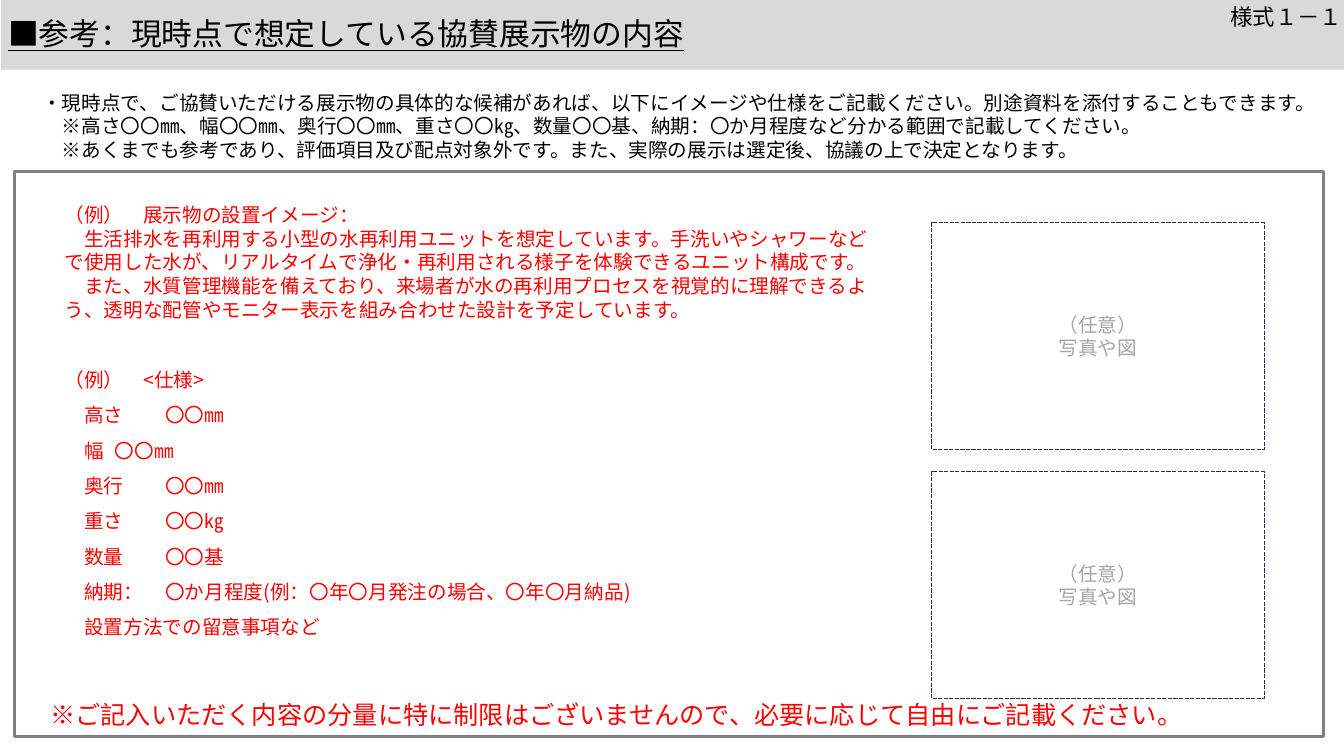
from dataclasses import dataclass

from pptx import Presentation
from pptx import util as u
from pptx.dml.color import RGBColor
from pptx.enum import dml, shapes, text
from pptx.oxml.ns import qn

FONT = "Noto Sans CJK JP"
LEADING = 1.2
COLORS = {
    "ink": "000000",
    "example": "FF0000",
    "band": "D9D9D9",
    "frame": "808080",
    "paper": "FFFFFF",
    "dash": "1E3256",
    "hint": "A6A6A6",
}

TITLE = "■参考：現時点で想定している協賛展示物の内容"
FORM_NUMBER = "様式１－１"
INTRO = [
    "・現時点で、ご協賛いただける展示物の具体的な候補があれば、以下にイメージや仕様をご記載ください。別途資料を添付することもできます。",
    "　※高さ〇〇㎜、幅〇〇㎜、奥行〇〇㎜、重さ〇〇㎏、数量〇〇基、納期：〇か月程度など分かる範囲で記載してください。",
    "　※あくまでも参考であり、評価項目及び配点対象外です。また、実際の展示は選定後、協議の上で決定となります。",
]
IMAGE_HEADING = "（例）　展示物の設置イメージ："
IMAGE_TEXT = [
    "　生活排水を再利用する小型の水再利用ユニットを想定しています。手洗いやシャワーなどで使用した水が、リアルタイムで浄化・再利用される様子を体験できるユニット構成です。",
    "　また、水質管理機能を備えており、来場者が水の再利用プロセスを視覚的に理解できるよう、透明な配管やモニター表示を組み合わせた設計を予定しています。",
]
SPEC_HEADING = "（例）　<仕様>"
SPECS = [
    ("高さ", "〇〇㎜"),
    ("幅", "〇〇㎜"),
    ("奥行", "〇〇㎜"),
    ("重さ", "〇〇㎏"),
    ("数量", "〇〇基"),
    ("納期：", "〇か月程度(例：〇年〇月発注の場合、〇年〇月納品)"),
]
SPEC_NOTE = "　設置方法での留意事項など"
PHOTO_HINT = ["（任意）", "写真や図"]
FOOTNOTE = "※ご記入いただく内容の分量に特に制限はございませんので、必要に応じて自由にご記載ください。"


@dataclass
class Box:
    left: float
    top: float
    width: float
    height: float

    def share(self, left, top, width, height):
        return Box(
            self.left + self.width * left / 100,
            self.top + self.height * top / 100,
            self.width * width / 100,
            self.height * height / 100,
        )

    def lengths(self):
        return [int(n) for n in (self.left, self.top, self.width, self.height)]


def color(name):
    return RGBColor.from_string(COLORS[name])


def write(frame, para, words, size=14, ink="ink", spacing=1.0, gap=0,
          align=text.PP_ALIGN.LEFT, underline=False):
    if para is None:
        para = frame.add_paragraph()
    para.alignment = align
    para.line_spacing = u.Pt(size * LEADING * spacing)
    para.space_before = u.Pt(gap)
    para.space_after = u.Pt(0)
    span = para.add_run()
    span.text = words
    span.font.size = u.Pt(size)
    span.font.name = FONT
    span.font.color.rgb = color(ink)
    span.font.underline = underline
    east_asian = span.font._element.makeelement(qn("a:ea"), {"typeface": FONT})
    span.font._element.find(qn("a:latin")).addnext(east_asian)


def write_all(frame, lines, **style):
    for number, words in enumerate(lines):
        write(frame, None if number else frame.paragraphs[0], words, **style)


def add_text(page, box, lines, padded=False, anchor=text.MSO_ANCHOR.TOP, **style):
    frame = page.shapes.add_textbox(*box.lengths()).text_frame
    frame.word_wrap = True
    frame.vertical_anchor = anchor
    if not padded:
        frame.margin_left = frame.margin_right = 0
        frame.margin_top = frame.margin_bottom = 0
    write_all(frame, lines, **style)
    return frame


def add_rect(page, box, fill=None, line=None, weight=1, dash=None):
    rect = page.shapes.add_shape(shapes.MSO_SHAPE.RECTANGLE, *box.lengths())
    rect.shadow.inherit = False
    if fill:
        rect.fill.solid()
        rect.fill.fore_color.rgb = color(fill)
    else:
        rect.fill.background()
    if line:
        rect.line.color.rgb = color(line)
        rect.line.width = u.Pt(weight)
        if dash:
            rect.line.dash_style = dash
    else:
        rect.line.fill.background()
    return rect


def add_header(page, box):
    add_rect(page, box, fill="band")
    add_text(page, box.share(0.53, 21.74, 91.9, 53.62), [TITLE], size=22, underline=True)
    add_text(page, box.share(88.97, -10.14, 11.55, 60.87), [FORM_NUMBER], padded=True,
             anchor=text.MSO_ANCHOR.BOTTOM, size=16, spacing=0.9,
             align=text.PP_ALIGN.RIGHT)


def add_example(page, box):
    red = {"ink": "example"}
    loose = {"ink": "example", "spacing": 1.5}
    frame = add_text(page, box, [IMAGE_HEADING], **loose)
    for words in IMAGE_TEXT:
        write(frame, None, words, **red)
    write(frame, None, SPEC_HEADING, gap=14 * LEADING * 1.5, **loose)
    for label, value in SPECS:
        write(frame, None, f"　{label}\t{value}", **loose)
    write(frame, None, SPEC_NOTE, **loose)


def add_photo_space(page, box):
    rect = add_rect(page, box, fill="paper", line="dash",
                    dash=dml.MSO_LINE.SQUARE_DOT)
    rect.text_frame.vertical_anchor = text.MSO_ANCHOR.MIDDLE
    write_all(rect.text_frame, PHOTO_HINT, ink="hint", align=text.PP_ALIGN.CENTER)


def add_entry_panel(page, box):
    add_rect(page, box, line="frame", weight=2.25)
    add_example(page, box.share(3.85, 3.57, 62.43, 78.79))
    for row in range(2):
        add_photo_space(page, box.share(70.05, 9.09 + 44.03 * row, 25.4, 40.11))
    add_text(page, box.share(2.77, 93.4, 88.68, 5.35), [FOOTNOTE], size=18, ink="example")


def main():
    deck = Presentation()
    deck.slide_width = u.Inches(13.33)
    deck.slide_height = u.Inches(7.5)
    page = deck.slides.add_slide(deck.slide_layouts[6])
    slide = Box(0, 0, deck.slide_width, deck.slide_height)
    add_header(page, slide.share(0.08, 0, 100, 9.2))
    add_text(page, slide.share(3.15, 12, 96.17, 9.47), INTRO)
    add_entry_panel(page, slide.share(1.05, 22.67, 97.45, 74.8))
    deck.save("out.pptx")


if __name__ == "__main__":
    main()
